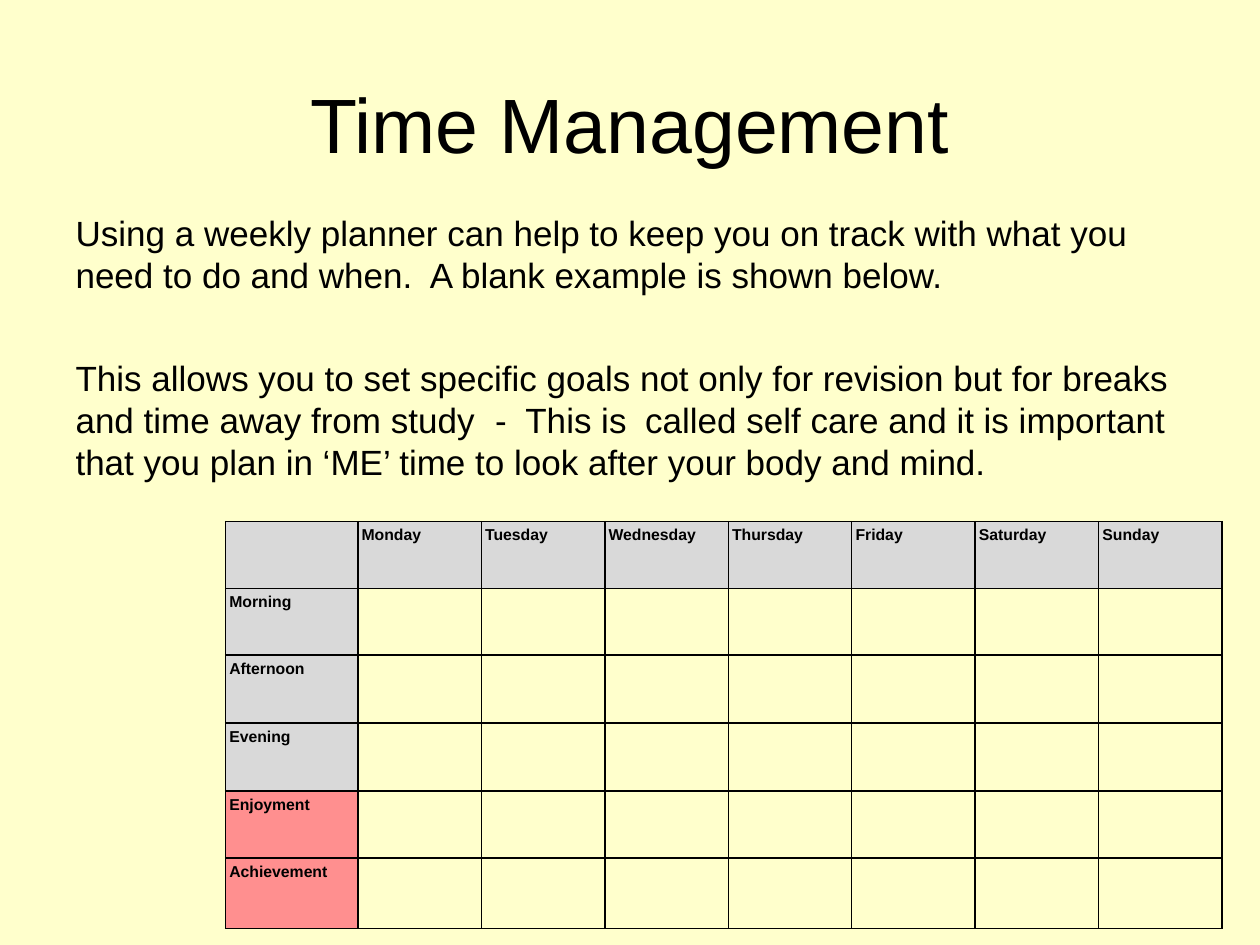
from lxml import etree
from pptx import Presentation
from pptx.dml.color import RGBColor
from pptx.enum.text import PP_ALIGN
from pptx.oxml.ns import qn
from pptx.util import Inches, Pt


def rgb(value):
    return RGBColor.from_string(value)


def add_text(left, top, width, height, paragraphs, size):
    """Add a wrapping text box without margins and return its paragraphs."""
    tf = s.shapes.add_textbox(Inches(left), Inches(top),
                              Inches(width), Inches(height)).text_frame
    tf.word_wrap = True
    tf.margin_left = tf.margin_top = tf.margin_right = tf.margin_bottom = 0
    for i, text in enumerate(paragraphs):
        p = tf.add_paragraph() if i else tf.paragraphs[0]
        p.add_run().text = text
        p.font.name = "Arial"
        p.font.size = Pt(size)
        p.font.color.rgb = rgb("000000")
    return tf.paragraphs


prs = Presentation()
prs.slide_width, prs.slide_height = Inches(10), Inches(7.5)
s = prs.slides.add_slide(prs.slide_layouts[6])
s.background.fill.solid()
s.background.fill.fore_color.rgb = rgb("FFFFCC")

# Title and body
title = add_text(0.83, 0.61, 8.34, 0.8, ["Time Management"], 44)
title[0].alignment = PP_ALIGN.CENTER

body = add_text(0.6, 1.68, 8.9, 2.13, [
    "Using a weekly planner can help to keep you on track with what you "
    "need to do and when.  A blank example is shown below.",
    "This allows you to set specific goals not only for revision but for breaks "
    "and time away from study\t-\tThis is\tcalled self care and it is important "
    "that you plan in ‘ME’ time to look after your body and mind.",
], 20)
for p in body:
    p.line_spacing = Pt(24)
body[1].space_before = Pt(35)
tabs = etree.Element(qn("a:tabLst"))
for pos in (3.33, 3.57, 4.52):
    etree.SubElement(tabs, qn("a:tab"), pos=str(Inches(pos)), algn="l")
body[1].font  # the default run properties follow the tab list
body[1]._p.pPr.find(qn("a:defRPr")).addprevious(tabs)

# Weekly planner
days = ["Monday", "Tuesday", "Wednesday", "Thursday", "Friday", "Saturday", "Sunday"]
row_names = ["Morning", "Afternoon", "Evening", "Enjoyment", "Achievement"]
red_rows = ("Enjoyment", "Achievement")
col_widths = [1.05] + [0.98] * len(days)
row_heights = [0.53, 0.53, 0.54, 0.54, 0.53, 0.56]

planner = s.shapes.add_table(len(row_heights), len(col_widths), Inches(1.79), Inches(4.14),
                             Inches(sum(col_widths)), Inches(sum(row_heights))).table
planner.first_row = planner.horz_banding = False
for col, width in zip(planner.columns, col_widths):
    col.width = Inches(width)
for row, height in zip(planner.rows, row_heights):
    row.height = Inches(height)

for r, row_name in enumerate([""] + row_names):
    for c, day in enumerate([""] + days):
        cell = planner.cell(r, c)
        cell.margin_left, cell.margin_top = Inches(0.03), Inches(0.04)
        cell.margin_right = cell.margin_bottom = 0
        if r == 0 or c == 0:
            cell.fill.solid()
            cell.fill.fore_color.rgb = rgb("FF8F8F" if row_name in red_rows else "D9D9D9")
            label = row_name or day
            if label:
                p = cell.text_frame.paragraphs[0]
                p.add_run().text = label
                p.font.name = "Arial"
                p.font.size = Pt(9)
                p.font.bold = True
                p.font.color.rgb = rgb("000000")
        else:
            cell.fill.background()
        tcPr = cell._tc.get_or_add_tcPr()
        for i, side in enumerate(("a:lnL", "a:lnR", "a:lnT", "a:lnB")):
            ln = etree.Element(qn(side), w=str(Pt(1)))
            fill = etree.SubElement(ln, qn("a:solidFill"))
            etree.SubElement(fill, qn("a:srgbClr"), val="000000")
            tcPr.insert(i, ln)

prs.save("out.pptx")
